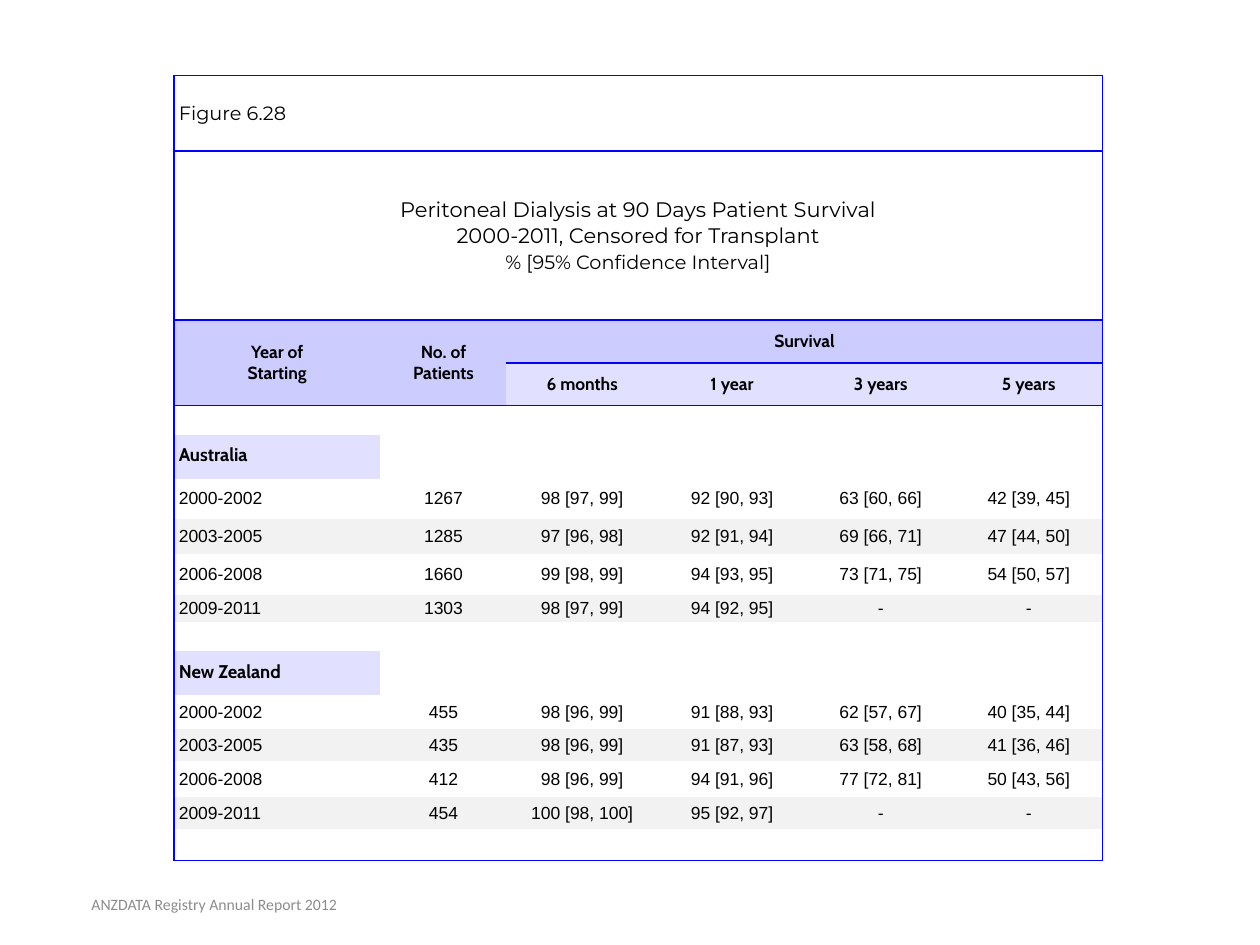
from dataclasses import dataclass

from lxml.etree import SubElement
from pptx import Presentation
from pptx.dml.color import RGBColor as Color
from pptx.enum.text import MSO_ANCHOR as Anchor, PP_ALIGN as Align
from pptx.oxml.ns import qn
from pptx.util import Inches, Pt

SLIDE_WIDTH, SLIDE_HEIGHT = 10, 7.5
COLUMNS = [1.64, 1, 1.2, 1.18, 1.18, 1.17]
ROWS = [0.6, 1.34, 0.34, 0.34, 0.23, 0.35, 0.32, 0.28, 0.32, 0.22,
        0.23, 0.35, 0.27, 0.25, 0.29, 0.25, 0.25]
RULED_ROWS = range(5)
PLAIN_STYLE = "{2D5ABB26-0587-4C30-8999-92F81FD0307C}"
PERIODS = ["2000-2002", "2003-2005", "2006-2008", "2009-2011"]
REGIONS = {
    "Australia": (5, [
        ["1267", "98 [97, 99]", "92 [90, 93]", "63 [60, 66]", "42 [39, 45]"],
        ["1285", "97 [96, 98]", "92 [91, 94]", "69 [66, 71]", "47 [44, 50]"],
        ["1660", "99 [98, 99]", "94 [93, 95]", "73 [71, 75]", "54 [50, 57]"],
        ["1303", "98 [97, 99]", "94 [92, 95]", "-", "-"],
    ]),
    "New Zealand": (11, [
        ["455", "98 [96, 99]", "91 [88, 93]", "62 [57, 67]", "40 [35, 44]"],
        ["435", "98 [96, 99]", "91 [87, 93]", "63 [58, 68]", "41 [36, 46]"],
        ["412", "98 [96, 99]", "94 [91, 96]", "77 [72, 81]", "50 [43, 56]"],
        ["454", "100 [98, 100]", "95 [92, 97]", "-", "-"],
    ]),
}


@dataclass(frozen=True)
class Style:
    font: str
    size: float
    bold: bool = False
    color: str = "000000"
    inset: float = 0
    space_after: float = 0
    line_spacing: float = 1


@dataclass(frozen=True)
class Theme:
    border: str = "0000FF"
    header: str = "CCCCFF"
    subheader: str = "E1E1FF"
    band: str = "F2F2F2"
    border_width: float = 1
    empty_size: float = 8
    caption: Style = Style("Montserrat", 11, inset=0.04)
    title: Style = Style("Montserrat", 12, inset=0.04)
    heading: Style = Style("Cabin", 10, bold=True, inset=0.02)
    region: Style = Style("Cabin", 10.5, bold=True, inset=0.02, line_spacing=0.75)
    body: Style = Style("Arial", 10, space_after=14)
    footer: Style = Style("Calibri", 9, color="8C8C8C")


THEME = Theme()


def format_text(text_frame, style, align):
    for paragraph in text_frame.paragraphs:
        paragraph.alignment = align
        paragraph.line_spacing = style.line_spacing
        paragraph.space_after = Pt(style.space_after)
        for run in paragraph.runs:
            run.font.name = style.font
            run.font.size = Pt(style.size)
            run.font.bold = style.bold
            run.font.color.rgb = Color.from_string(style.color)


def write_cell(cell, text, style, align=Align.CENTER, fill=None):
    cell.text_frame.text = text
    cell.vertical_anchor = Anchor.MIDDLE
    cell.margin_left = cell.margin_right = Inches(0.04)
    cell.margin_top = cell.margin_bottom = Inches(style.inset)
    format_text(cell.text_frame, style, align)
    if fill:
        cell.fill.solid()
        cell.fill.fore_color.rgb = Color.from_string(fill)


def draw_borders(cell, sides):
    properties = cell._tc.get_or_add_tcPr()
    for tag, visible in sides.items():
        line = SubElement(properties, qn(f"a:{tag}"), w=str(Pt(THEME.border_width)))
        if visible:
            fill = SubElement(line, qn("a:solidFill"))
            SubElement(fill, qn("a:srgbClr"), val=THEME.border)
        else:
            SubElement(line, qn("a:noFill"))


def prepare_cell(cell, row, column):
    right, bottom = column + cell.span_width, row + cell.span_height
    draw_borders(cell, {
        "lnL": column == 0,
        "lnR": right == len(COLUMNS),
        "lnT": row in RULED_ROWS and not cell.is_spanned,
        "lnB": bottom in RULED_ROWS or bottom == len(ROWS),
    })
    cell.fill.background()
    cell.margin_top = cell.margin_bottom = 0
    paragraph = cell.text_frame.paragraphs[0]
    SubElement(paragraph._p, qn("a:endParaRPr"), sz=str(int(THEME.empty_size * 100)))


def add_grid(slide):
    frame = slide.shapes.add_table(
        len(ROWS), len(COLUMNS), Inches(0.138 * SLIDE_WIDTH), Inches(0.08 * SLIDE_HEIGHT),
        Inches(sum(COLUMNS)), Inches(sum(ROWS)))
    table = frame.table
    table.first_row = table.horz_banding = False
    table._tbl.tblPr.find(qn("a:tableStyleId")).text = PLAIN_STYLE
    for column, width in zip(table.columns, COLUMNS):
        column.width = Inches(width)
    for row, height in zip(table.rows, ROWS):
        row.height = Inches(height)
    for first, last in [((0, 0), (0, 5)), ((1, 0), (1, 5)), ((2, 0), (3, 0)),
                        ((2, 1), (3, 1)), ((2, 2), (2, 5))]:
        table.cell(*first).merge(table.cell(*last))
    for row in range(len(ROWS)):
        for column in range(len(COLUMNS)):
            prepare_cell(table.cell(row, column), row, column)
    return table


def fill_headings(table):
    write_cell(table.cell(0, 0), "Figure 6.28", THEME.caption, Align.LEFT)
    title = table.cell(1, 0)
    write_cell(title, "Peritoneal Dialysis at 90 Days Patient Survival\n"
               "2000-2011, Censored for Transplant\n% [95% Confidence Interval]", THEME.title)
    interval = title.text_frame.paragraphs[-1]
    interval.space_before = interval.space_after = Pt(1)
    interval.runs[0].font.size = Pt(THEME.caption.size)
    for column, text in enumerate(["Year of\nStarting", "No. of\nPatients", "Survival"]):
        write_cell(table.cell(2, column), text, THEME.heading, fill=THEME.header)
    for column, text in enumerate(["6 months", "1 year", "3 years", "5 years"], 2):
        write_cell(table.cell(3, column), text, THEME.heading, fill=THEME.subheader)


def fill_region(table, name, top, records):
    write_cell(table.cell(top, 0), name, THEME.region, Align.LEFT, THEME.subheader)
    for index, (period, values) in enumerate(zip(PERIODS, records)):
        fill = THEME.band if index % 2 else None
        for column, text in enumerate([period, *values]):
            align = Align.CENTER if column else Align.LEFT
            write_cell(table.cell(top + 1 + index, column), text, THEME.body, align, fill)


def add_footer(slide, text):
    box = slide.shapes.add_textbox(
        Inches(0.02 * SLIDE_WIDTH), Inches(0.93 * SLIDE_HEIGHT),
        Inches(0.3 * SLIDE_WIDTH), Inches(0.4))
    text_frame = box.text_frame
    text_frame.word_wrap = True
    text_frame.vertical_anchor = Anchor.MIDDLE
    text_frame.text = text
    format_text(text_frame, THEME.footer, Align.CENTER)


def main():
    presentation = Presentation()
    presentation.slide_width = Inches(SLIDE_WIDTH)
    presentation.slide_height = Inches(SLIDE_HEIGHT)
    slide = presentation.slides.add_slide(presentation.slide_layouts[6])
    table = add_grid(slide)
    fill_headings(table)
    for name, (top, records) in REGIONS.items():
        fill_region(table, name, top, records)
    add_footer(slide, "ANZDATA Registry Annual Report 2012")
    presentation.save("out.pptx")


if __name__ == "__main__":
    main()
